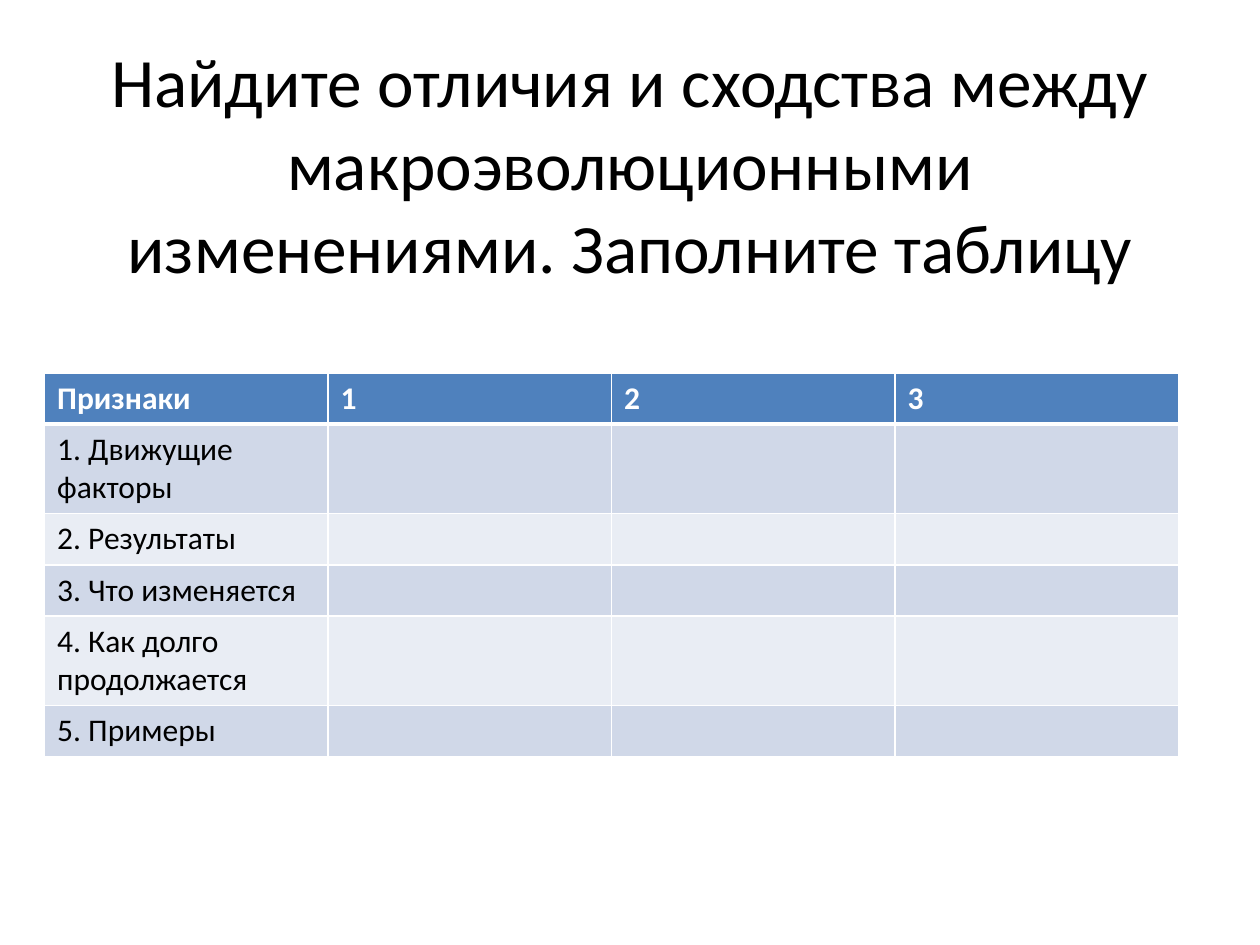
from dataclasses import dataclass

from lxml import etree
from pptx import Presentation
from pptx import util as u
from pptx.dml import color
from pptx.enum import text
from pptx.oxml import ns


@dataclass(frozen=True)
class Theme:
    font: str = "Calibri"
    ink: str = "000000"
    white: str = "FFFFFF"
    header: str = "4F81BD"
    bands: tuple = ("D0D8E8", "E9EDF4")
    title_size: float = 39.6
    table_size: float = 18
    rule: float = 1
    header_rule: float = 3


THEME = Theme()
TITLE = ("Найдите отличия и сходства между макроэволюционными "
         "изменениями. Заполните таблицу")
HEADINGS = ["Признаки", "1", "2", "3"]
FEATURES = ["1. Движущие факторы", "2. Результаты", "3. Что изменяется",
            "4. Как долго продолжается", "5. Примеры"]
ONE_LINE, TWO_LINES = 1.03, 1.8
ROW_HEIGHTS = [ONE_LINE, TWO_LINES, ONE_LINE, ONE_LINE, TWO_LINES, ONE_LINE]


def style_text(frame, size, ink, bold=False):
    for para in frame.paragraphs:
        for span in para.runs:
            span.font.name = THEME.font
            span.font.size = u.Pt(size)
            span.font.bold = bold
            span.font.color.rgb = color.RGBColor.from_string(ink)


def set_borders(cell, bottom):
    """Draw white rules on all four sides; they come before the fill in XML."""
    properties = cell._tc.get_or_add_tcPr()
    widths = {"lnL": THEME.rule, "lnR": THEME.rule, "lnT": THEME.rule, "lnB": bottom}
    for index, (side, width) in enumerate(widths.items()):
        line = etree.Element(ns.qn(f"a:{side}"), w=str(u.Pt(width)))
        fill = etree.SubElement(line, ns.qn("a:solidFill"))
        etree.SubElement(fill, ns.qn("a:srgbClr"), val=THEME.white)
        properties.insert(index, line)


def place_title(page, left, top, width, height):
    title = page.shapes.title
    title.left, title.top = u.Cm(left), u.Cm(top)
    title.width, title.height = u.Cm(width), u.Cm(height)
    frame = title.text_frame
    frame.text = TITLE
    frame.word_wrap = True
    frame.auto_size = text.MSO_AUTO_SIZE.NONE
    frame.vertical_anchor = text.MSO_ANCHOR.MIDDLE
    frame.margin_bottom = u.Cm(1.83)  # lifts the text by half a line
    frame.paragraphs[0].alignment = text.PP_ALIGN.CENTER
    style_text(frame, THEME.title_size, THEME.ink)


def place_table(page, left, top, width):
    rows = [HEADINGS] + [[name] + [""] * (len(HEADINGS) - 1) for name in FEATURES]
    table = page.shapes.add_table(
        len(rows), len(HEADINGS), u.Cm(left), u.Cm(top),
        u.Cm(width), u.Cm(sum(ROW_HEIGHTS))).table
    for row, height in zip(table.rows, ROW_HEIGHTS):
        row.height = u.Cm(height)

    for row_index, words in enumerate(rows):
        heading = row_index == 0
        back = THEME.header if heading else THEME.bands[(row_index - 1) % 2]
        for column_index, word in enumerate(words):
            cell = table.cell(row_index, column_index)
            cell.fill.solid()
            cell.fill.fore_color.rgb = color.RGBColor.from_string(back)
            set_borders(cell, THEME.header_rule if heading else THEME.rule)
            if word:
                cell.text_frame.text = word
                style_text(cell.text_frame, THEME.table_size,
                           THEME.white if heading else THEME.ink, heading)


def main():
    deck = Presentation()
    deck.slide_width, deck.slide_height = u.Cm(25.4), u.Cm(19.05)
    page = deck.slides.add_slide(deck.slide_layouts.get_by_name("Title Only"))
    # Task heading
    place_title(page, 1.27, 0.76, 22.86, 6.76)
    # Comparison grid to fill in
    place_table(page, 0.9, 7.52, 22.86)
    deck.save("out.pptx")


if __name__ == "__main__":
    main()
